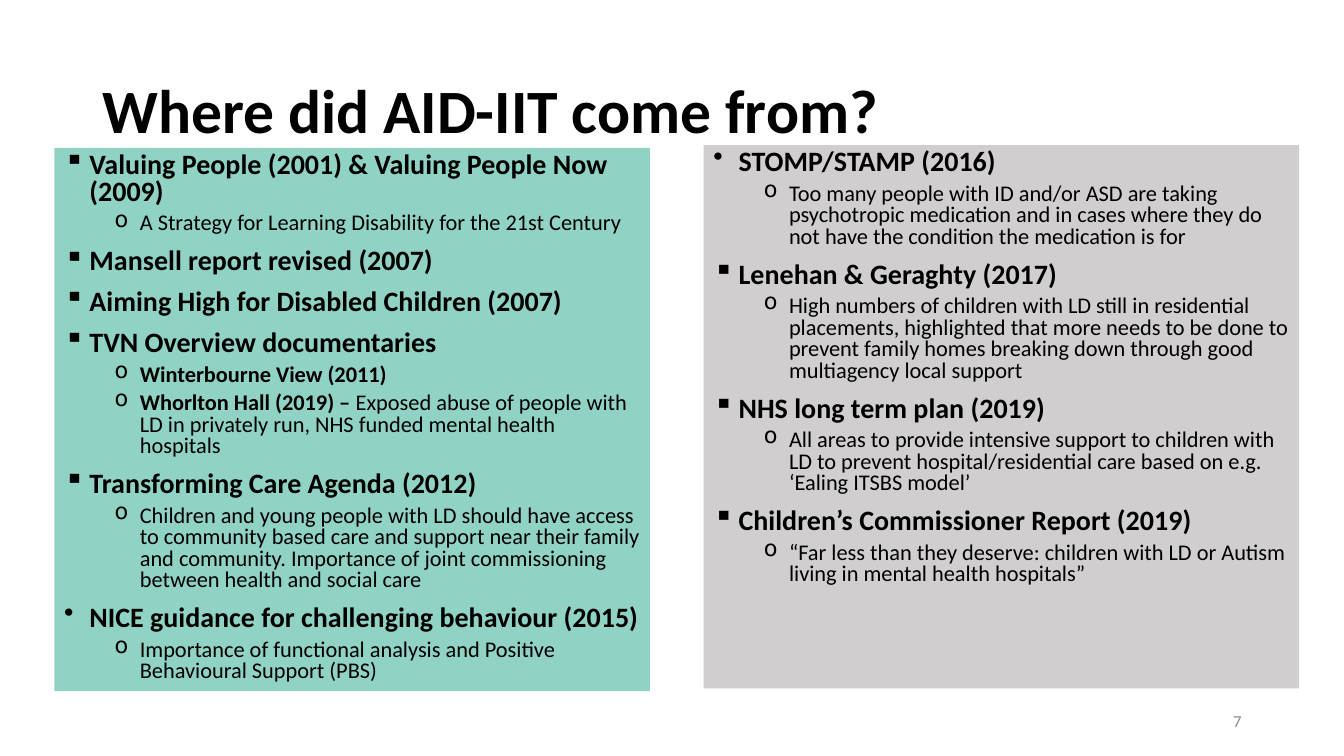
"""Build the slide on the policy background of AID-IIT."""
from dataclasses import dataclass

from lxml.etree import SubElement
from pptx import Presentation
from pptx.dml.color import RGBColor
from pptx.enum.shapes import MSO_SHAPE as Preset
from pptx.enum.text import MSO_ANCHOR as Anchor, MSO_AUTO_SIZE as AutoSize, PP_ALIGN as Align
from pptx.oxml.ns import qn
from pptx.util import Cm, Pt

FONT = "Calibri"
BLACK = "000000"
GREY = "8C8C8C"
INDENT = 0.635


@dataclass(frozen=True)
class Topic:
    text: str
    marker: str = "▪"


@dataclass(frozen=True)
class Detail:
    text: str = ""
    lead: str = ""
    marker: str = "o"


@dataclass(frozen=True)
class Panel:
    left: float
    top: float
    fill: str
    bullets: tuple


PANELS = (
    Panel(1.37, 3.73, "90D3C4", (
        Topic("Valuing People (2001) & Valuing People Now (2009)"),
        Detail("A Strategy for Learning Disability for the 21st Century"),
        Topic("Mansell report revised (2007)"),
        Topic("Aiming High for Disabled Children (2007)"),
        Topic("TVN Overview documentaries"),
        Detail(lead="Winterbourne View (2011)"),
        Detail("Exposed abuse of people with LD in privately run, NHS funded mental health hospitals",
               lead="Whorlton Hall (2019) – "),
        Topic("Transforming Care Agenda (2012)"),
        Detail("Children and young people with LD should have access to community based care "
               "and support near their family and community. Importance of joint "
               "commissioning between health and social care"),
        Topic("NICE guidance for challenging behaviour (2015)", "•"),
        Detail("Importance of functional analysis and Positive Behavioural Support (PBS)"),
    )),
    Panel(17.73, 3.66, "D0CECE", (
        Topic("STOMP/STAMP (2016)", "•"),
        Detail("Too many people with ID and/or ASD are taking psychotropic medication and in "
               "cases where they do not have the condition the medication is for"),
        Topic("Lenehan & Geraghty (2017)"),
        Detail("High numbers of children with LD still in residential placements, highlighted "
               "that more needs to be done to prevent family homes breaking down through good "
               "multiagency local support"),
        Topic("NHS long term plan (2019)"),
        Detail("All areas to provide intensive support to children with LD to prevent "
               "hospital/residential care based on e.g. ‘Ealing ITSBS model’"),
        Topic("Children’s Commissioner Report (2019)"),
        Detail("“Far less than they deserve: children with LD or Autism living in mental "
               "health hospitals”"),
    )),
)


def colour(value: str) -> RGBColor:
    return RGBColor.from_string(value)


def format_run(run, size: float, bold: bool = False, ink: str = BLACK) -> None:
    run.font.name = FONT
    run.font.size = Pt(size)
    run.font.bold = bold
    run.font.color.rgb = colour(ink)


def add_bullet(paragraph, bullet: Topic | Detail) -> None:
    is_topic = isinstance(bullet, Topic)
    paragraph.alignment = Align.LEFT
    paragraph.level = 0 if is_topic else 1
    paragraph.line_spacing = 0.8
    paragraph.space_before = Pt(10 if is_topic else 5)
    properties = paragraph._p.get_or_add_pPr()
    properties.set("marL", str(Cm(INDENT if is_topic else 3 * INDENT)))
    properties.set("indent", str(-Cm(INDENT)))
    SubElement(properties, qn("a:buChar")).set("char", bullet.marker)
    parts = [(bullet.text, True)] if is_topic else [(bullet.lead, True), (bullet.text, False)]
    for text, bold in parts:
        if text:
            run = paragraph.add_run()
            run.text = text
            format_run(run, 20 if is_topic else 16, bold)


def add_panel(slide, panel: Panel) -> None:
    shape = slide.shapes.add_shape(
        Preset.RECTANGLE, Cm(panel.left), Cm(panel.top), Cm(15.01), Cm(13.69))
    shape.shadow.inherit = False
    shape.fill.solid()
    shape.fill.fore_color.rgb = colour(panel.fill)
    shape.line.fill.background()
    frame = shape.text_frame
    frame.word_wrap = True
    frame.vertical_anchor = Anchor.TOP
    for index, bullet in enumerate(panel.bullets):
        add_bullet(frame.add_paragraph() if index else frame.paragraphs[0], bullet)


def set_title(slide, text: str) -> None:
    title = slide.shapes.title
    title.left, title.top, title.width, title.height = Cm(2.33), Cm(1.01), Cm(29.21), Cm(3.68)
    frame = title.text_frame
    frame.text = text
    frame.auto_size = AutoSize.NONE
    frame.vertical_anchor = Anchor.MIDDLE
    paragraph = frame.paragraphs[0]
    paragraph.alignment = Align.LEFT
    paragraph.line_spacing = 0.9
    format_run(paragraph.runs[0], 44, True)


def add_slide_number(slide, number: str) -> None:
    box = slide.shapes.add_textbox(Cm(23.92), Cm(17.66), Cm(7.62), Cm(1.01))
    frame = box.text_frame
    frame.text = number
    frame.word_wrap = True
    frame.vertical_anchor = Anchor.MIDDLE
    paragraph = frame.paragraphs[0]
    paragraph.alignment = Align.RIGHT
    format_run(paragraph.runs[0], 12, ink=GREY)


def main() -> None:
    presentation = Presentation()
    presentation.slide_width, presentation.slide_height = Cm(33.87), Cm(19.05)
    slide = presentation.slides.add_slide(presentation.slide_layouts.get_by_name("Title Only"))
    set_title(slide, "Where did AID-IIT come from?")
    for panel in PANELS:
        add_panel(slide, panel)
    add_slide_number(slide, "7")
    presentation.save("out.pptx")


if __name__ == "__main__":
    main()
